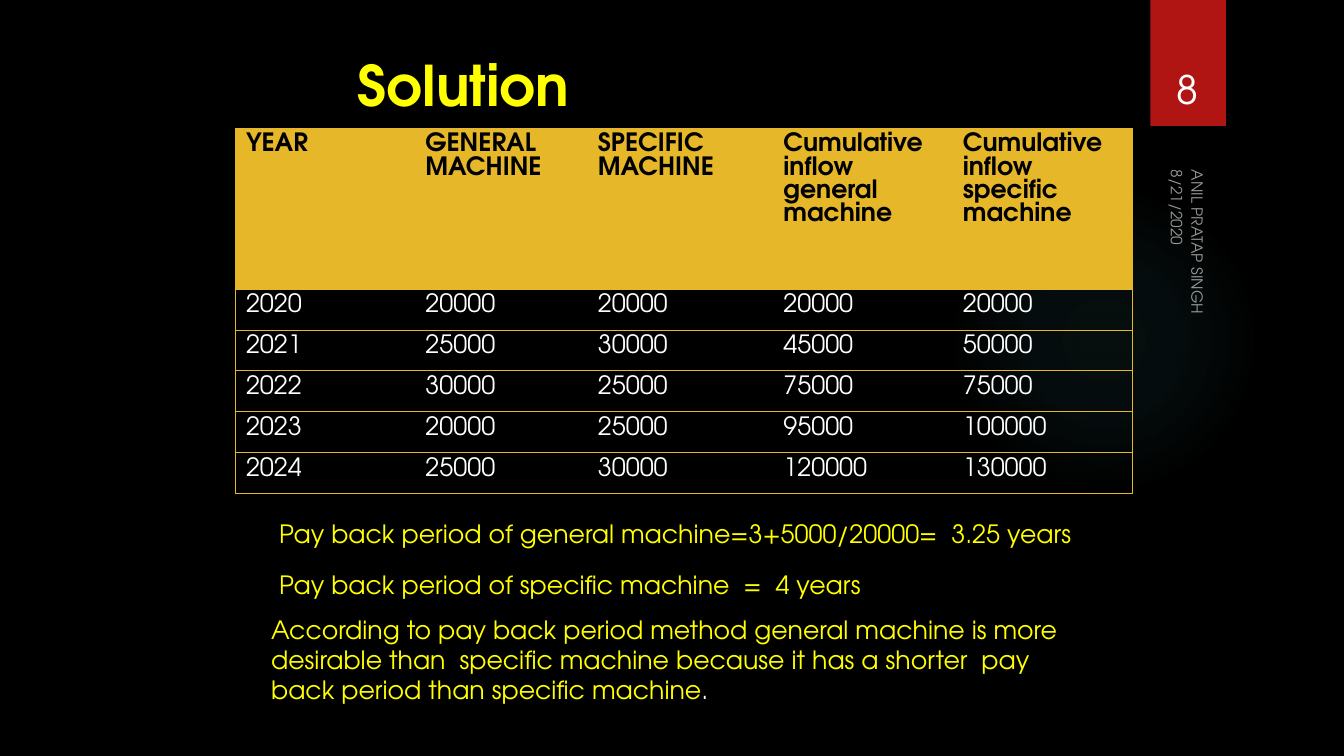
import pptx
import pptx.util
import pptx.dml.color
import pptx.enum.shapes
import pptx.enum.text
import pptx.oxml
import pptx.oxml.ns
from lxml import etree

RGBColor = pptx.dml.color.RGBColor
Inches = pptx.util.Inches
Pt = pptx.util.Pt
Anchor = pptx.enum.text.MSO_ANCHOR
Align = pptx.enum.text.PP_ALIGN
Preset = pptx.enum.shapes.MSO_SHAPE
qn = pptx.oxml.ns.qn

BLACK = RGBColor(0x00, 0x00, 0x00)
WHITE = RGBColor(0xFF, 0xFF, 0xFF)
YELLOW = RGBColor(0xFF, 0xFF, 0x00)
GOLD = RGBColor(0xE6, 0xB7, 0x29)
RED = RGBColor(0xB0, 0x15, 0x13)
TEAL = RGBColor(0x50, 0xB9, 0xC1)
FONT = "TeX Gyre Adventor"
PLAIN_TABLE_STYLE = "{2D5ABB26-0587-4C30-8999-92F81FD0307C}"

HEADINGS = ["YEAR", "GENERAL MACHINE", "SPECIFIC MACHINE",
            "Cumulative inflow general machine", "Cumulative inflow specific machine"]
YEARS = [
    (2020, 20000, 20000, 20000, 20000),
    (2021, 25000, 30000, 45000, 50000),
    (2022, 30000, 25000, 75000, 75000),
    (2023, 20000, 25000, 95000, 100000),
    (2024, 25000, 30000, 120000, 130000),
]
COLUMN_WIDTHS = [1.78, 1.71, 1.84, 1.78, 1.78]
HEADING_HEIGHT, YEAR_HEIGHT = 1.6, 0.405
TABLE_LEFT, TABLE_TOP = 2.34, 1.27

TITLE = ("Solution", (3.45, 0.45, 6.67, 0.77))
GENERAL_PAYBACK = ("Pay back period of general machine=3+5000/20000=  3.25 years",
                   (2.67, 5.09, 8.56, 0.4))
SPECIFIC_PAYBACK = ("Pay back period of specific machine  =  4 years",
                    (2.67, 5.6, 6.67, 0.4))
CONCLUSION = ("According to pay back period method general machine is more desirable than  "
              "specific machine because it has a shorter  pay back period than specific machine",
              (2.59, 6.04, 8.29, 1.01))
DATE = ("8/21/2020", (11.11, 1.96, 1.08, 0.33))
AUTHOR = ("ANIL PRATAP SINGH", (9.79, 3.53, 4.22, 0.33))
NUMBER = ("8", (11.32, 0.32, 0.92, 0.84))
GLOW_STOPS = [(0, 7), (36, 6), (69, 0)]


def style(run, size, color, bold=False):
    run.font.name = FONT
    run.font.size = Pt(size)
    run.font.bold = bold
    run.font.color.rgb = color


def add_text(content, size, color, bold=False, anchor=Anchor.TOP):
    words, place = content
    box = slide.shapes.add_textbox(*map(Inches, place))
    box.text_frame.word_wrap = True
    box.text_frame.vertical_anchor = anchor
    box.text_frame.text = words
    style(box.text_frame.paragraphs[0].runs[0], size, color, bold)
    return box


def add_side_label(content, anchor):
    label = add_text(content, 11, WHITE, anchor=anchor)
    label.rotation = 90
    for color in label.text_frame._txBody.iter(qn("a:srgbClr")):
        etree.SubElement(color, qn("a:alpha"), val="60000")


def add_decoration(preset, place, color):
    shape = slide.shapes.add_shape(preset, *map(Inches, place))
    shape.shadow.inherit = False
    shape.fill.solid()
    shape.fill.fore_color.rgb = color
    shape.line.fill.background()
    return shape


def add_glow():
    glow = add_decoration(Preset.OVAL, (9.41, 1.83, 3.08, 3.08), TEAL)
    stops = "".join(
        f'<a:gs pos="{position * 1000}"><a:srgbClr val="{TEAL}">'
        f'<a:alpha val="{alpha * 1000}"/></a:srgbClr></a:gs>'
        for position, alpha in GLOW_STOPS)
    gradient = pptx.oxml.parse_xml(
        f'<a:gradFill {pptx.oxml.ns.nsdecls("a")}><a:gsLst>{stops}</a:gsLst>'
        '<a:path path="circle"><a:fillToRect l="50000" t="50000" r="50000" b="50000"/>'
        '</a:path></a:gradFill>')
    properties = glow._element.spPr
    properties.replace(properties.find(qn("a:solidFill")), gradient)


def add_borders(cell, sides):
    properties = cell._tc.get_or_add_tcPr()
    for index, side in enumerate(sides):
        border = etree.Element(qn(f"a:ln{side}"), w=str(Pt(0.75)))
        fill = etree.SubElement(border, qn("a:solidFill"))
        etree.SubElement(fill, qn("a:srgbClr"), val=str(GOLD))
        properties.insert(index, border)


def add_payback_table():
    rows = [HEADINGS] + YEARS
    heights = [HEADING_HEIGHT] + [YEAR_HEIGHT] * len(YEARS)
    table = slide.shapes.add_table(
        len(rows), len(HEADINGS), Inches(TABLE_LEFT), Inches(TABLE_TOP),
        Inches(sum(COLUMN_WIDTHS)), Inches(sum(heights))).table
    table._tbl.tblPr.find(qn("a:tableStyleId")).text = PLAIN_TABLE_STYLE
    for column, width in zip(table.columns, COLUMN_WIDTHS):
        column.width = Inches(width)
    for row, height in zip(table.rows, heights):
        row.height = Inches(height)
    for row, values in enumerate(rows):
        heading = row == 0
        for column, value in enumerate(values):
            cell = table.cell(row, column)
            if heading:
                cell.fill.solid()
                cell.fill.fore_color.rgb = GOLD
            else:
                cell.fill.background()
            cell.text_frame.text = str(value)
            style(cell.text_frame.paragraphs[0].runs[0], 18,
                  BLACK if heading else WHITE, heading)
            left = "L" if column == 0 else ""
            right = "R" if column == len(values) - 1 else ""
            add_borders(cell, left + right + "TB")


deck = pptx.Presentation()
deck.slide_width, deck.slide_height = Inches(13.33), Inches(7.5)
slide = deck.slides.add_slide(deck.slide_layouts[6])
slide.background.fill.solid()
slide.background.fill.fore_color.rgb = BLACK

add_glow()
add_decoration(Preset.RECTANGLE, (11.41, 0, 0.75, 1.25), RED)
add_side_label(DATE, Anchor.TOP)
add_side_label(AUTHOR, Anchor.BOTTOM)
number = add_text(NUMBER, 28, WHITE, anchor=Anchor.BOTTOM)
number.text_frame.paragraphs[0].alignment = Align.CENTER
add_payback_table()
add_text(TITLE, 40, YELLOW, bold=True)
add_text(GENERAL_PAYBACK, 18, YELLOW)
conclusion = add_text(CONCLUSION, 18, YELLOW)
full_stop = conclusion.text_frame.paragraphs[0].add_run()
full_stop.text = "."
style(full_stop, 18, WHITE)
add_text(SPECIFIC_PAYBACK, 18, YELLOW)

deck.save("out.pptx")
